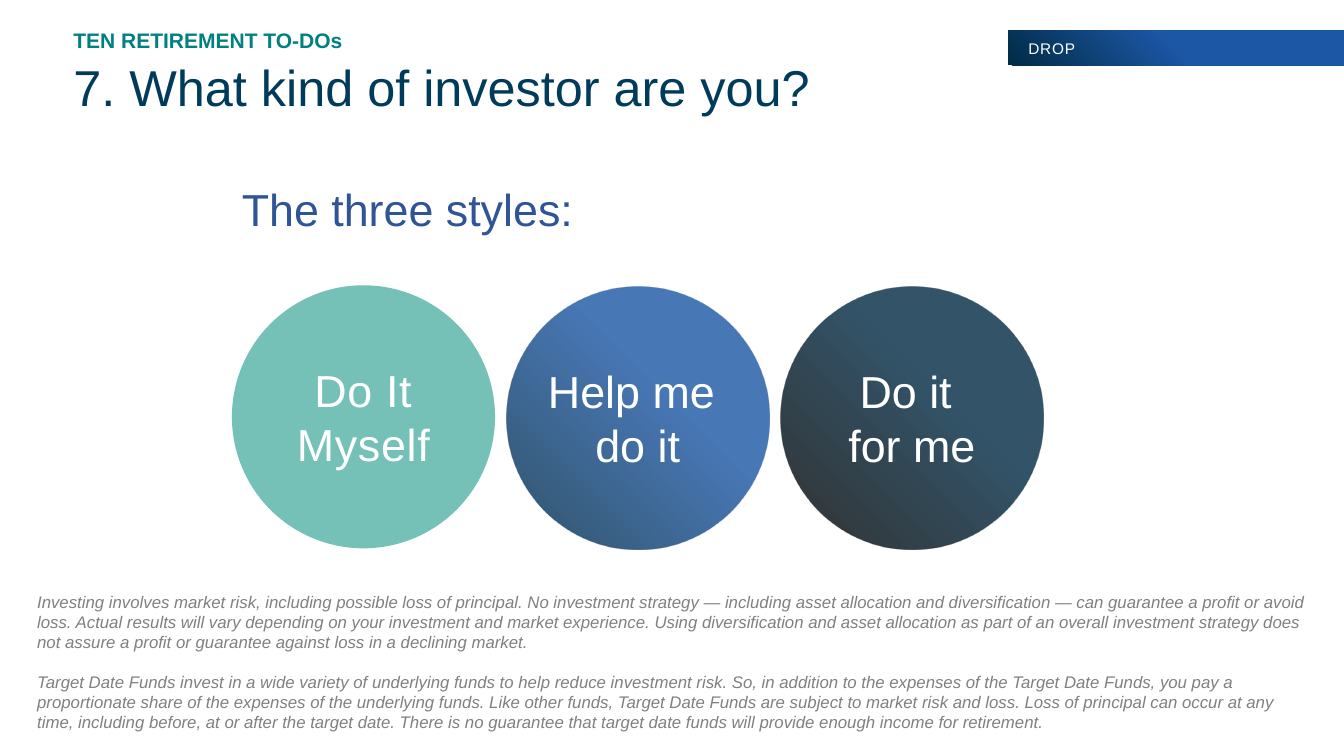
from dataclasses import dataclass

from lxml.etree import SubElement
from pptx import Presentation
from pptx.dml.color import RGBColor
from pptx.enum.shapes import MSO_SHAPE as SHAPE
from pptx.enum.text import MSO_ANCHOR as ANCHOR, MSO_AUTO_SIZE as AUTO, PP_ALIGN as ALIGN
from pptx.oxml.ns import qn
from pptx.util import Emu, Pt

PX = 9144  # 100 px to the inch


@dataclass(frozen=True)
class Theme:
    font: str = "Arial"
    white: str = "FFFFFF"
    black: str = "000000"
    navy: str = "002B45"
    blue: str = "1C57A5"
    mint: str = "75C1B7"
    teal: str = "008080"
    title: str = "003B5C"
    heading: str = "2F5597"
    grey: str = "808080"
    tag_size: int = 11
    note_size: int = 12
    kicker_size: int = 15
    style_size: int = 32
    title_size: int = 36


T = Theme()


@dataclass(frozen=True)
class Fill:
    start: str
    end: str = ""  # empty for a plain fill
    stop: int = 100  # percent
    alpha: int = 100  # percent


@dataclass(frozen=True)
class Style:
    text: str
    y: int
    fill: Fill
    spacing: int = 0  # hundredths of a point


@dataclass(frozen=True)
class Label:
    box: tuple[int, int, int, int]
    paragraphs: tuple[str, ...]
    size: int
    color: str
    bold: bool = False
    italic: bool = False
    middle: bool = False


def px(*values: int) -> list[Emu]:
    return [Emu(v * PX) for v in values]


def set_font(p, size: int, color: str, spacing: int = 0) -> None:
    p.font.name, p.font.size = T.font, Pt(size)
    p.font.color.rgb = RGBColor.from_string(color)
    if spacing:
        p._p.get_or_add_pPr().get_or_add_defRPr().set("spc", str(spacing))


def paint(sp, fill: Fill) -> None:
    sp.shadow.inherit = False
    sp.line.fill.background()
    if not fill.end:
        sp.fill.solid()
        sp.fill.fore_color.rgb = RGBColor.from_string(fill.start)
        return
    sp.fill.gradient()
    sp.fill.gradient_angle = 45
    ends = ((fill.start, 0), (fill.end, fill.stop))
    for stop, (color, position) in zip(sp.fill.gradient_stops, ends):
        stop.color.rgb = RGBColor.from_string(color)
        stop.position = position / 100
    if fill.alpha < 100:
        for clr in sp._element.spPr.iter(qn("a:srgbClr")):
            SubElement(clr, qn("a:alpha")).set("val", str(fill.alpha * 1000))


def add_filled(s, kind: SHAPE, box: tuple[int, int, int, int], fill: Fill, text: str,
               size: int, align: ALIGN, margin: int = 0, spacing: int = 0) -> None:
    sp = s.shapes.add_shape(kind, *px(*box))
    paint(sp, fill)
    tf = sp.text_frame
    tf.word_wrap, tf.vertical_anchor = True, ANCHOR.MIDDLE
    tf.margin_left, tf.margin_right = px(margin, margin)
    tf.margin_top = tf.margin_bottom = 0
    p = tf.paragraphs[0]
    p.text, p.alignment = text, align
    set_font(p, size, T.white, spacing)


def add_label(s, label: Label) -> None:
    tf = s.shapes.add_textbox(*px(*label.box)).text_frame
    tf.word_wrap = True
    tf.vertical_anchor = ANCHOR.MIDDLE if label.middle else ANCHOR.TOP
    tf.auto_size = AUTO.NONE if label.middle else AUTO.SHAPE_TO_FIT_TEXT
    for i, text in enumerate(label.paragraphs):
        p = tf.add_paragraph() if i else tf.paragraphs[0]
        p.text = text
        if i:
            p.space_before = Pt(14)
        set_font(p, label.size, label.color)
        p.font.bold, p.font.italic = label.bold, label.italic


LABELS = (
    Label((63, 22, 669, 35), ("TEN RETIREMENT TO-DOs",), T.kicker_size, T.teal, bold=True),
    Label((63, 51, 1057, 71), ("7. What kind of investor are you?",), T.title_size, T.title),
    Label((230, 166, 664, 82), ("The three styles:",), T.style_size, T.heading, middle=True),
    Label((27, 582, 1288, 187), (
        "Investing involves market risk, including possible loss of principal. "
        "No investment strategy — including asset allocation and diversification — "
        "can guarantee a profit or avoid loss. Actual results will vary depending on "
        "your investment and market experience. Using diversification and asset "
        "allocation as part of an overall investment strategy does not assure a profit "
        "or guarantee against loss in a declining market.",
        "Target Date Funds invest in a wide variety of underlying funds to help reduce "
        "investment risk. So, in addition to the expenses of the Target Date Funds, you "
        "pay a proportionate share of the expenses of the underlying funds. Like other "
        "funds, Target Date Funds are subject to market risk and loss. Loss of principal "
        "can occur at any time, including before, at or after the target date. There is "
        "no guarantee that target date funds will provide enough income for retirement.",
    ), T.note_size, T.grey, italic=True),
)

STYLES = (
    Style("Do It Myself", 283, Fill(T.mint), spacing=50),
    Style("Help me \ndo it", 284, Fill(T.navy, T.blue, 60, 80)),
    Style("Do it \nfor me", 284, Fill(T.black, T.navy, 60, 80)),
)
FIRST_X, PITCH, DIAMETER = 230, 272, 261


def main() -> None:
    prs = Presentation()
    prs.slide_width, prs.slide_height = px(1333, 750)
    s = prs.slides.add_slide(prs.slide_layouts[6])

    # Corner tag
    add_filled(s, SHAPE.RECTANGLE, (1000, 30, 333, 35), Fill(T.navy, T.blue, 50),
               "DROP", T.tag_size, ALIGN.LEFT, margin=20, spacing=50)

    # Investor styles
    for i, style in enumerate(STYLES):
        box = (FIRST_X + i * PITCH, style.y, DIAMETER, DIAMETER)
        add_filled(s, SHAPE.OVAL, box, style.fill, style.text,
                   T.style_size, ALIGN.CENTER, spacing=style.spacing)

    # Headings and disclosures
    for label in LABELS:
        add_label(s, label)

    prs.save("out.pptx")


if __name__ == "__main__":
    main()
